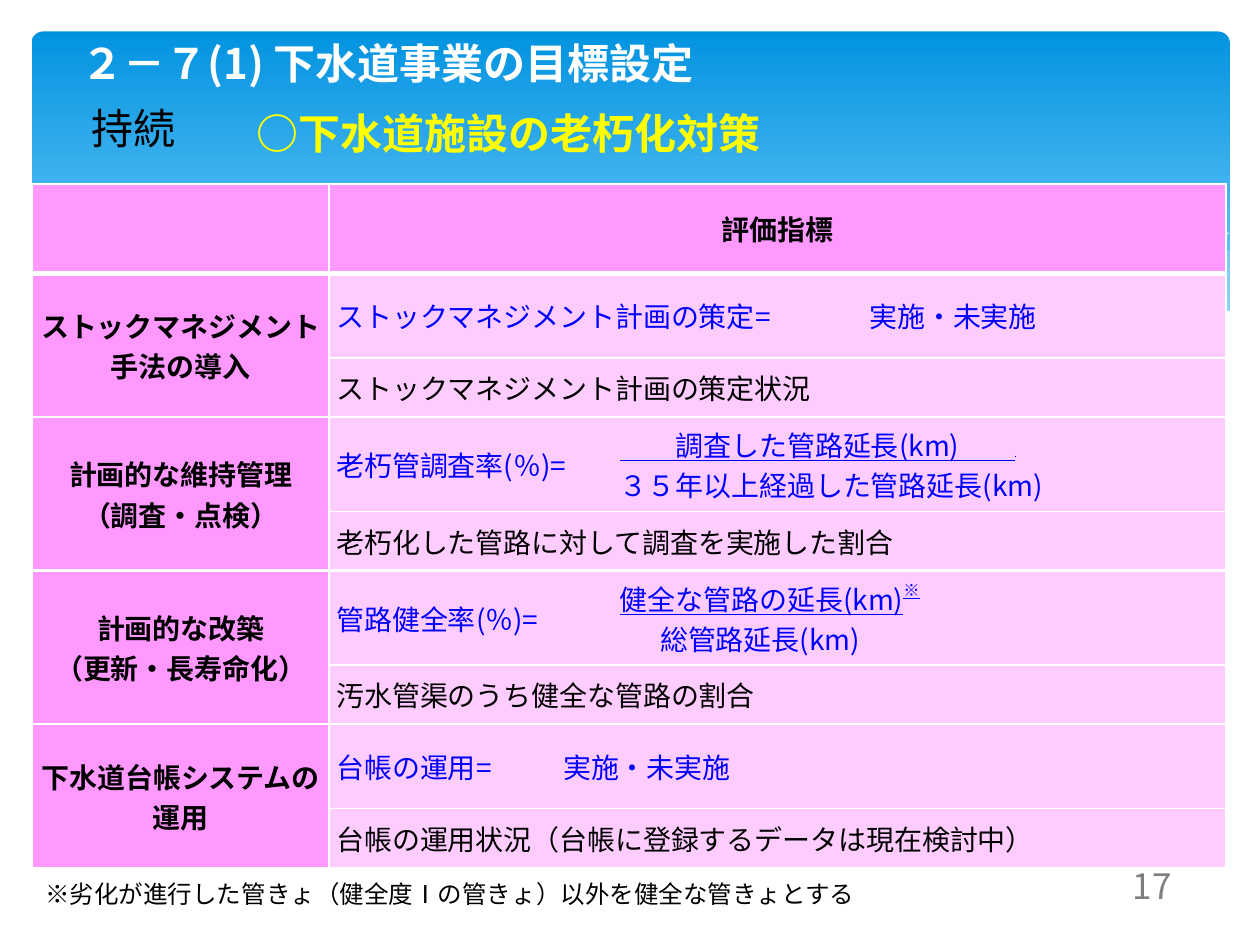
import pptx
import pptx.util
import pptx.dml.color
import pptx.enum.shapes
import pptx.enum.text
import pptx.oxml.ns
from lxml import etree

PX = 9144  # 100 px to the inch
FONT = "Noto Sans CJK JP"
PINK, PALE, BLUE, BLACK, WHITE = "FF99FF", "FFCCFF", "0000FF", "000000", "FFFFFF"
CENTER, LEFT = pptx.enum.text.PP_ALIGN.CENTER, pptx.enum.text.PP_ALIGN.LEFT
MIDDLE, TOP = pptx.enum.text.MSO_ANCHOR.MIDDLE, pptx.enum.text.MSO_ANCHOR.TOP
qn = pptx.oxml.ns.qn


def rgb(hex_color):
    return pptx.dml.color.RGBColor.from_string(hex_color)


def add_run(p, text, size, color, bold=False, underline=None, baseline=0):
    r = p.add_run()
    r.text = text
    r.font.size = pptx.util.Pt(size)
    r.font.name = FONT
    r.font.bold = bold
    r.font.underline = underline
    r.font.color.rgb = rgb(color)
    rPr = r.font._element
    etree.SubElement(rPr, qn("a:ea")).set("typeface", FONT)
    if baseline:
        rPr.set("baseline", str(baseline * 1000))


prs = pptx.Presentation()
prs.slide_width, prs.slide_height = 1000 * PX, 750 * PX
s = prs.slides.add_slide(prs.slide_layouts[6])

# Blue header panel
sp = s.shapes.add_shape(pptx.enum.shapes.MSO_SHAPE.ROUNDED_RECTANGLE,
                        25 * PX, 25 * PX, 951 * PX, 270 * PX)
sp.adjustments[0] = 0.034
sp.shadow.inherit = False
sp.line.fill.background()
sp.fill.gradient()
sp.fill.gradient_angle = 270
for stop, color, position in zip(sp.fill.gradient_stops, ("0293E0", "81D2FE"), (0, 0.9)):
    stop.color.rgb = rgb(color)
    stop.position = position

# Waves along the foot of the header: points, fill, opacity in percent
waves = [
    ([(975, 199), (921, 210), (861, 223), (805, 237), (753, 248), (706, 257), (661, 265),
      (705, 271), (757, 276), (803, 278), (854, 276), (897, 270), (935, 261), (976, 247),
      (976, 199)], "C6E7FC", 29),
    ([(893, 273), (837, 265), (775, 254), (706, 240), (629, 222), (584, 211), (541, 203),
      (501, 196), (442, 189), (380, 186), (328, 187), (286, 191), (342, 199), (404, 211),
      (491, 232), (566, 248), (634, 261), (709, 272), (773, 277), (828, 278), (893, 273)],
     "C6E7FC", 40),
    ([(309, 195), (344, 190), (401, 187), (469, 189), (533, 194), (608, 204), (695, 219),
      (795, 241), (907, 272)], None, 100),
    ([(613, 257), (672, 241), (748, 223), (836, 204), (910, 192), (975, 185)], None, 100),
    ([(977, 246), (930, 262), (875, 273), (809, 277), (744, 274), (668, 265), (579, 250),
      (503, 233), (418, 213), (339, 197), (271, 188), (193, 184), (132, 186), (85, 193),
      (52, 201), (23, 213), (23, 329), (977, 329), (977, 246)], WHITE, 100),
]
for points, fill, opacity in waves:
    builder = s.shapes.build_freeform(*points[0], scale=PX)
    builder.add_line_segments(points[1:], close=fill is not None)
    sp = builder.convert_to_shape()
    sp.shadow.inherit = False
    if fill:
        sp.line.fill.background()
        sp.fill.solid()
        sp.fill.fore_color.rgb = rgb(fill)
        if opacity < 100:
            clr = sp.fill._xPr.find(qn("a:solidFill"))[0]
            etree.SubElement(clr, qn("a:alpha")).set("val", str(opacity * 1000))
    else:
        sp.fill.background()
        sp.line.color.rgb = rgb(WHITE)
        sp.line.width = 0

# Indicator table
col_widths = [235, 180, 45, 198, 289]
row_heights = [71, 67, 47, 75, 47, 75, 47, 67, 47]
frame = s.shapes.add_table(len(row_heights), len(col_widths), 26 * PX, 146 * PX,
                           sum(col_widths) * PX, sum(row_heights) * PX)
tbl = frame.table
tbl.first_row = tbl.horz_banding = False
for col, width in zip(tbl.columns, col_widths):
    col.width = width * PX
for row, height in zip(tbl.rows, row_heights):
    row.height = height * PX

blue = {"color": BLUE}
under = {"color": BLUE, "underline": True}
bold = {"color": BLACK, "bold": True}
plain = {"color": BLACK}

# Label lines, formula, columns the formula takes, value paragraphs, description
groups = [
    (["ストックマネジメント手法の導入"], "ストックマネジメント計画の策定=", 3,
     [[("実施・未実施", blue)]],
     "ストックマネジメント計画の策定状況"),
    (["計画的な維持管理", "（調査・点検）"], "⽼朽管調査率(％)=", 2,
     [[("　　調査した管路延長(km)　　", under), (".", {**under, "size": 1})],
      [("３５年以上経過した管路延長(km)", blue)]],
     "老朽化した管路に対して調査を実施した割合"),
    (["計画的な改築", "（更新・長寿命化）"], "管路健全率(％)=", 2,
     [[("健全な管路の延長(km)", under), ("※", {**under, "baseline": 50})],
      [("総管路延長(km)", blue)]],
     "汚水管渠のうち健全な管路の割合"),
    (["下水道台帳システムの運用"], "台帳の運用=", 1,
     [[("実施・未実施", blue)]],
     "台帳の運用状況（台帳に登録するデータは現在検討中）"),
]

# Row, column, row span, column span, fill, borders (left, right, top, bottom), paragraphs
cells = [
    (0, 0, 1, 1, PINK, (1, 1, 1, 3), []),
    (0, 1, 1, 4, PINK, (1, 1, 1, 3), [[("評価指標", bold)]]),
]
for i, (label, formula, span, value, description) in enumerate(groups):
    row = 1 + 2 * i
    top = 1.5 if i else 3
    cells += [
        (row, 0, 2, 1, PINK, (1, 1, top, 1.5), [[(line, bold)] for line in label]),
        (row, 1, 1, span, PALE, (1, 0, top, 1), [[(formula, blue)]]),
        (row, 1 + span, 1, 4 - span, PALE, (0, 1, top, 1), value),
        (row + 1, 1, 1, 4, PALE, (1, 1, 1, 1.5), [[(description, plain)]]),
    ]

for row, col, row_span, col_span, fill, borders, paragraphs in cells:
    cell = tbl.cell(row, col)
    if row_span * col_span > 1:
        cell.merge(tbl.cell(row + row_span - 1, col + col_span - 1))
    for r in range(row, row + row_span):
        for c in range(col, col + col_span):
            part = tbl.cell(r, c)
            tcPr = part._tc.get_or_add_tcPr()
            for side, width in zip("LRTB", borders):
                ln = etree.SubElement(tcPr, qn("a:ln" + side), w=str(int(width * 12700)))
                if width:
                    line_fill = etree.SubElement(ln, qn("a:solidFill"))
                    etree.SubElement(line_fill, qn("a:srgbClr"), val=WHITE)
                else:
                    etree.SubElement(ln, qn("a:noFill"))
            part.fill.solid()
            part.fill.fore_color.rgb = rgb(fill)
    cell.vertical_anchor = MIDDLE
    cell.margin_left = 6 * PX
    cell.margin_right = 6 * PX if borders[1] else 0
    cell.margin_top = cell.margin_bottom = 0
    tf = cell.text_frame
    for n, runs in enumerate(paragraphs):
        p = tf.add_paragraph() if n else tf.paragraphs[0]
        p.alignment = CENTER if fill == PINK else LEFT
        for text, style in runs:
            add_run(p, text, **{"size": 16, **style})

# The denominator sits centred under its numerator
tbl.cell(5, 3).text_frame.paragraphs[1]._p.get_or_add_pPr().set("marL", str(32 * PX))

# Box, text, size, colour, bold, alignment, anchor, margins, indent
texts = [
    ((35, 79, 142, 52), "持続", 24, BLACK, False, CENTER, MIDDLE, (10, 0, 10, 8), 0),
    ((194, 80, 428, 51), "○下水道施設の老朽化対策", 24, "FFFF00", True, LEFT, TOP, (10, 5, 10, 5), 0),
    ((26, 693, 941, 34), "※劣化が進行した管きょ（健全度Ⅰの管きょ）以外を健全な管きょとする",
     14, BLACK, False, LEFT, TOP, (10, 5, 10, 5), 0),
    ((32, 24, 934, 51), "２－７(1) 下水道事業の目標設定", 24, WHITE, True, LEFT, MIDDLE, (0, 5, 0, 5), 33),
    ((851, 681, 127, 40), "17", 20, "7F7F7F", False, CENTER, TOP, (10, 5, 10, 5), 0),
]
for box, text, size, color, is_bold, align, anchor, margins, indent in texts:
    tf = s.shapes.add_textbox(*(v * PX for v in box)).text_frame
    tf.word_wrap = True
    tf.vertical_anchor = anchor
    tf.margin_left, tf.margin_top, tf.margin_right, tf.margin_bottom = (m * PX for m in margins)
    p = tf.paragraphs[0]
    p.alignment = align
    if indent:
        p._p.get_or_add_pPr().set("marL", str(indent * PX))
    add_run(p, text, size, color, is_bold)

prs.save("out.pptx")
